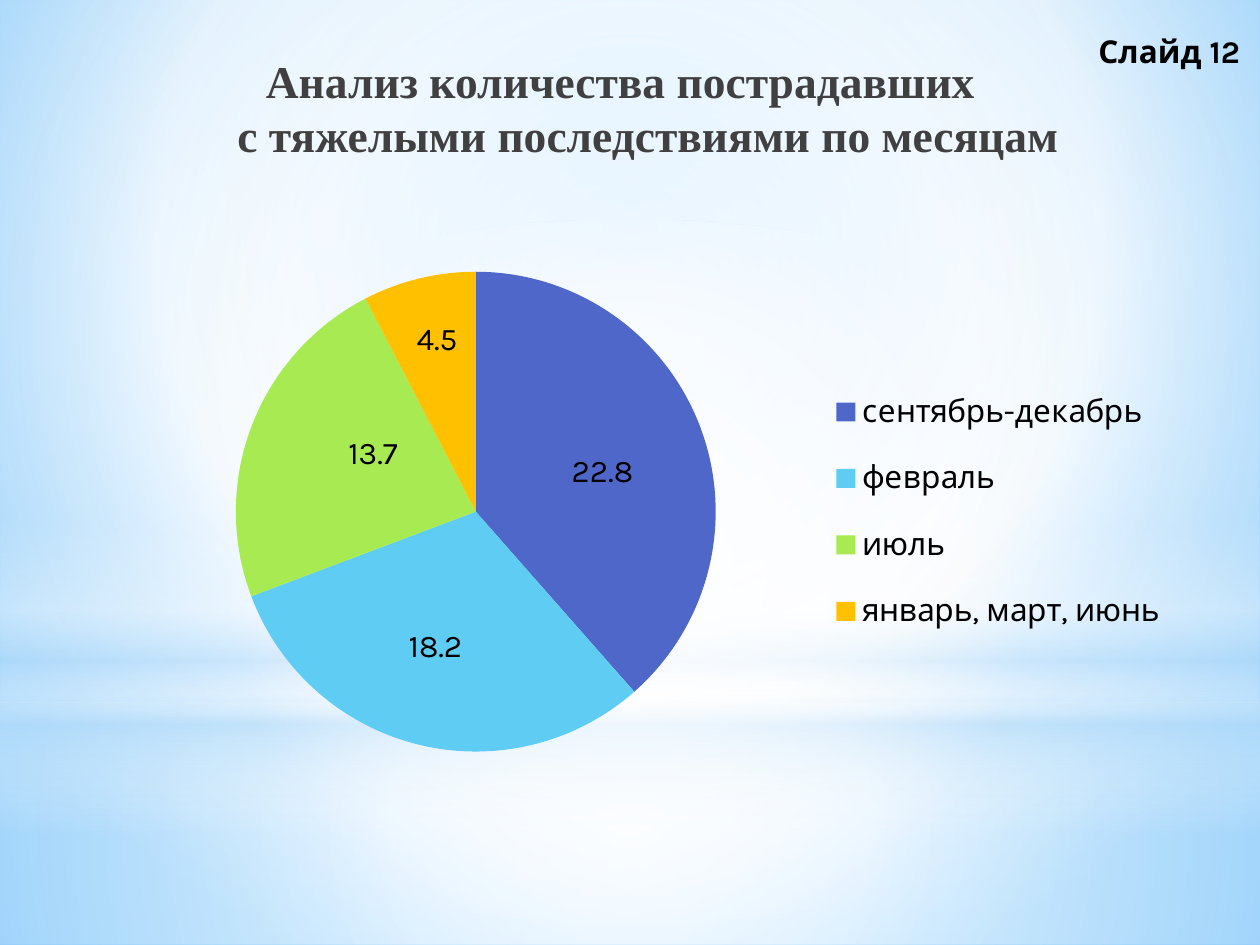
"""Build a slide with a pie chart of serious injuries by month."""
from dataclasses import dataclass

from lxml import etree
from pptx import Presentation
from pptx.chart.data import CategoryChartData
from pptx.dml.color import RGBColor
from pptx.enum.chart import XL_CHART_TYPE, XL_LABEL_POSITION, XL_LEGEND_POSITION
from pptx.enum.shapes import MSO_SHAPE
from pptx.enum.text import MSO_ANCHOR, PP_ALIGN
from pptx.oxml.ns import qn
from pptx.util import Emu, Pt

RECT, OVAL = MSO_SHAPE.RECTANGLE, MSO_SHAPE.OVAL
LEFT, CENTER = PP_ALIGN.LEFT, PP_ALIGN.CENTER
TOP, MIDDLE = MSO_ANCHOR.TOP, MSO_ANCHOR.MIDDLE
PIE = XL_CHART_TYPE.PIE
LABEL_CENTER = XL_LABEL_POSITION.CENTER
LEGEND_RIGHT = XL_LEGEND_POSITION.RIGHT
PX_PER_INCH = 126


@dataclass(frozen=True)
class Theme:
    white: str = "FFFFFF"
    haze: str = "B4DCFA"
    sky: str = "9ED5FF"
    deep_sky: str = "5BB9FF"
    title: str = "404040"
    text: str = "000000"
    title_font: str = "Times New Roman"
    body_font: str = "Karla"
    title_size: int = 26
    body_size: int = 18


@dataclass(frozen=True)
class Box:
    x: int
    y: int
    w: int
    h: int

    def emu(self) -> list[Emu]:
        return [px(v) for v in (self.x, self.y, self.w, self.h)]

    def share_of(self, outer: "Box") -> dict[str, float]:
        return {
            "x": (self.x - outer.x) / outer.w,
            "y": (self.y - outer.y) / outer.h,
            "w": self.w / outer.w,
            "h": self.h / outer.h,
        }


@dataclass(frozen=True)
class Gradient:
    stops: tuple[tuple[int, str, int], ...]
    center: tuple[int, int, int, int] | None = (50, 50, 50, 50)


@dataclass(frozen=True)
class Glow:
    shape: MSO_SHAPE
    box: Box
    gradient: Gradient


@dataclass(frozen=True)
class Slice:
    name: str
    value: float
    color: str
    shift: tuple[int, int]


T = Theme()
BACKDROP = Gradient(
    ((0, T.sky, 100), (60, T.white, 100), (100, T.deep_sky, 100)), (20, 10, 20, 60)
)
GLOWS = (
    Glow(RECT, Box(0, 703, 1260, 242),
         Gradient(((0, T.white, 91), (37, T.white, 76), (100, T.haze, 79)))),
    Glow(RECT, Box(0, 0, 1260, 703),
         Gradient(((0, T.white, 89), (48, T.white, 62), (100, T.haze, 79)))),
    Glow(RECT, Box(0, 519, 1260, 315),
         Gradient(((0, T.white, 0), (29, T.white, 30), (45, T.haze, 40),
                   (55, T.white, 26), (65, T.haze, 60), (100, T.white, 0)), None)),
    Glow(OVAL, Box(0, 220, 1260, 703),
         Gradient(((0, T.white, 100), (56, T.white, 0)))),
)
SLICES = (
    Slice("сентябрь-декабрь", 22.8, "4E67C8", (14, 3)),
    Slice("февраль", 18.2, "5ECCF3", (-11, 19)),
    Slice("июль", 13.7, "A7EA52", (9, -15)),
    Slice("январь, март, июнь", 4.5, "FFC000", (-10, -55)),
)
CHART = Box(143, 214, 1032, 595)
PLOT = Box(236, 272, 480, 480)
LEGEND = Box(828, 364, 340, 296)


def px(n: int) -> Emu:
    return Emu(round(n * 914400 / PX_PER_INCH))


def set_gradient(fill, parent, gradient: Gradient) -> None:
    fill.background()
    grad = etree.Element(qn("a:gradFill"), rotWithShape="1")
    stops = etree.SubElement(grad, qn("a:gsLst"))
    for pos, color, alpha in gradient.stops:
        gs = etree.SubElement(stops, qn("a:gs"), pos=str(pos * 1000))
        clr = etree.SubElement(gs, qn("a:srgbClr"), val=color)
        etree.SubElement(clr, qn("a:alpha"), val=str(alpha * 1000))
    if gradient.center:
        circle = etree.SubElement(grad, qn("a:path"), path="circle")
        sides = {k: str(v * 1000) for k, v in zip("ltrb", gradient.center)}
        etree.SubElement(circle, qn("a:fillToRect"), sides)
    else:
        etree.SubElement(grad, qn("a:lin"), ang="5400000", scaled="0")
    parent.replace(parent.find(qn("a:noFill")), grad)


def add_glow(slide, glow: Glow) -> None:
    sp = slide.shapes.add_shape(glow.shape, *glow.box.emu())
    sp.shadow.inherit = False
    sp.line.fill.background()
    set_gradient(sp.fill, sp._element.spPr, glow.gradient)


def add_text(slide, box: Box, text: str, *, font: str = T.body_font,
             size: int = T.body_size, color: str = T.text, align: PP_ALIGN = LEFT,
             anchor: MSO_ANCHOR = TOP, hanging: int = 0, wrap: bool = True) -> None:
    tf = slide.shapes.add_textbox(*box.emu()).text_frame
    tf.word_wrap = wrap
    tf.vertical_anchor = anchor
    p = tf.paragraphs[0]
    p.text = text
    p.alignment = align
    if hanging:
        pPr = p._p.get_or_add_pPr()
        pPr.set("marL", str(px(hanging)))
        pPr.set("indent", str(-px(hanging)))
    for r in p.runs:
        r.font.name, r.font.size, r.font.bold = font, Pt(size), True
        r.font.color.rgb = RGBColor.from_string(color)


def set_layout(parent, index: int, modes: dict[str, str],
               values: dict[str, float]) -> None:
    for old in parent.findall(qn("c:layout")):
        parent.remove(old)
    layout = etree.Element(qn("c:layout"))
    manual = etree.SubElement(layout, qn("c:manualLayout"))
    for tag, val in {**modes, **values}.items():
        text = val if isinstance(val, str) else f"{val:.3f}"
        etree.SubElement(manual, qn(f"c:{tag}"), val=text)
    parent.insert(index, layout)


def add_pie(slide, slices: tuple[Slice, ...]) -> None:
    data = CategoryChartData()
    data.categories = [s.name for s in slices]
    data.add_series("Series 1", [s.value for s in slices])
    chart = slide.shapes.add_chart(PIE, *CHART.emu(), data).chart
    chart.has_title = False
    chart.font.name, chart.font.size = T.body_font, Pt(T.body_size)
    chart.font.color.rgb = RGBColor.from_string(T.text)
    chart.has_legend = True
    chart.legend.position = LEGEND_RIGHT
    chart.legend.include_in_layout = False
    plot = chart.plots[0]
    plot.vary_by_categories = True
    plot.has_data_labels = True
    plot.data_labels.show_value = True
    plot.data_labels.show_percentage = False
    series = plot.series[0]
    for i, item in enumerate(slices):
        point = series.points[i]
        point.format.fill.solid()
        point.format.fill.fore_color.rgb = RGBColor.from_string(item.color)
        point.data_label.position = LABEL_CENTER
    for item, label in zip(slices, series._element.iter(qn("c:dLbl"))):
        dx, dy = item.shift
        set_layout(label, 1, {}, {"x": dx / CHART.w, "y": dy / CHART.h})
    edges = {"xMode": "edge", "yMode": "edge"}
    area = chart._chartSpace.chart.plotArea
    set_layout(area, 0, {"layoutTarget": "inner", **edges}, PLOT.share_of(CHART))
    set_layout(chart.legend._element, 1, edges, LEGEND.share_of(CHART))


def main() -> None:
    prs = Presentation()
    prs.slide_width, prs.slide_height = px(1260), px(945)
    slide = prs.slides.add_slide(prs.slide_layouts[6])
    fill = slide.background.fill
    fill.background()
    set_gradient(fill, next(slide._element.iter(qn("p:bgPr"))), BACKDROP)
    for glow in GLOWS:
        add_glow(slide, glow)
    add_text(slide, Box(178, 39, 897, 137),
             "Анализ количества пострадавших \vс тяжелыми последствиями по месяцам",
             font=T.title_font, size=T.title_size, color=T.title,
             align=CENTER, anchor=MIDDLE, hanging=44)
    add_pie(slide, SLICES)
    add_text(slide, Box(1086, 26, 174, 50), "Слайд 12", wrap=False)
    prs.save("out.pptx")


if __name__ == "__main__":
    main()
